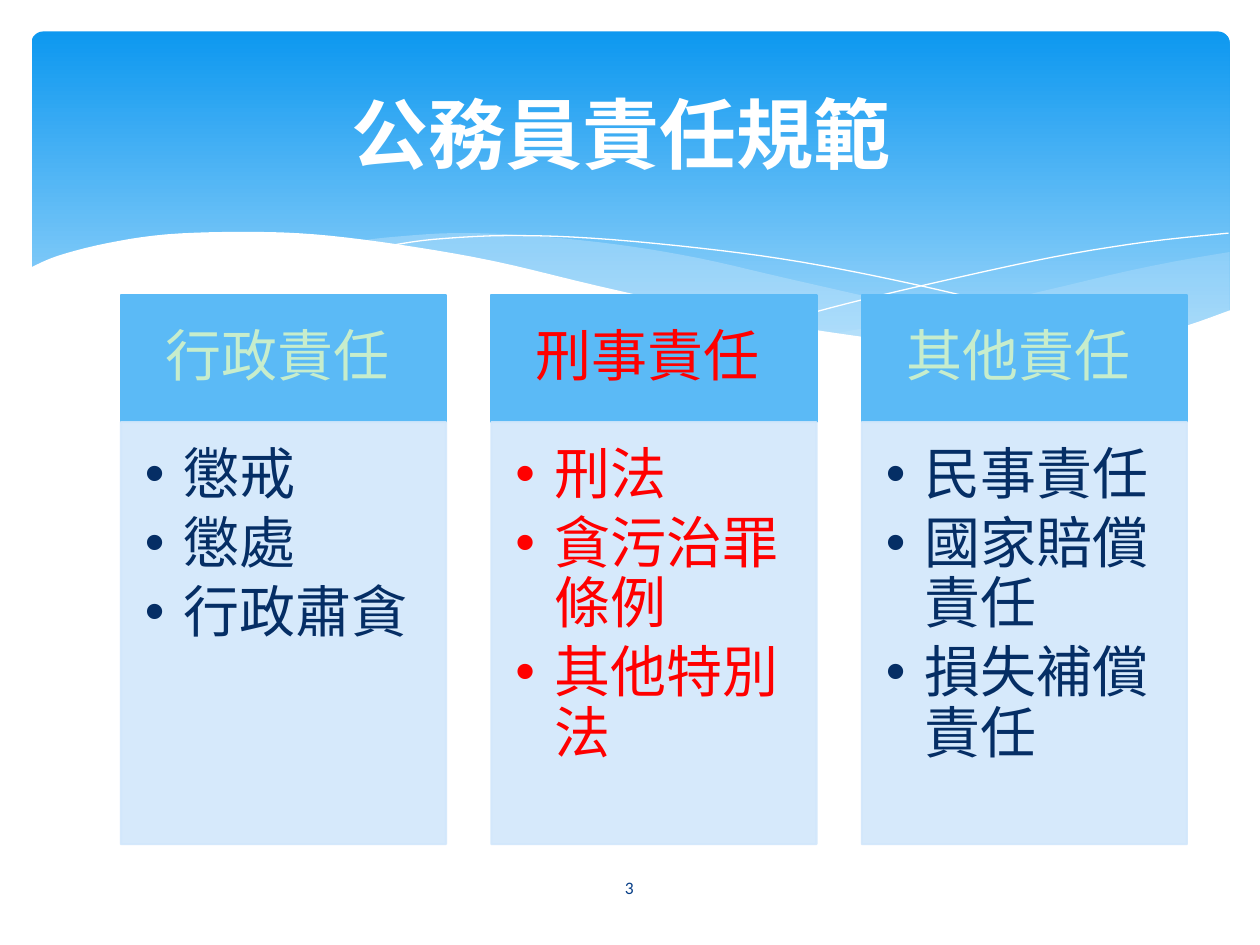
from lxml.etree import SubElement
from pptx import Presentation
from pptx.dml.color import RGBColor
from pptx.enum.shapes import MSO_SHAPE
from pptx.enum.text import MSO_ANCHOR, PP_ALIGN
from pptx.oxml.ns import qn
from pptx.util import Inches, Pt

WHITE, NAVY, RED, MINT = "FFFFFF", "052E65", "FF0000", "C7EDCC"
SKY, PALE, MIST = "5BBAF6", "D2E7FB", "C6E7FC"

BACK_RIGHT_TOP = [(9.76, 2), (9.35, 2.07), (8.91, 2.16), (8.32, 2.3), (7.53, 2.48), (6.61, 2.65)]
BACK_RIGHT_BOTTOM = [(6.61, 2.65), (7.05, 2.71), (7.57, 2.76), (8.03, 2.78), (8.54, 2.76),
                     (8.97, 2.7), (9.35, 2.62), (9.76, 2.47)]
MIDDLE_TOP = [(8.93, 2.73), (8.37, 2.65), (7.41, 2.47), (6.29, 2.22), (5.55, 2.05), (4.89, 1.94),
              (4.2, 1.87), (3.61, 1.85), (3.13, 1.88), (2.86, 1.91)]
MIDDLE_BOTTOM = [(2.86, 1.91), (3.42, 1.99), (4.04, 2.11), (4.91, 2.32), (5.66, 2.48), (6.5, 2.64),
                 (7.22, 2.74), (7.85, 2.78), (8.38, 2.78), (8.93, 2.73)]
LONG_LINE = [(3.09, 1.95), (3.44, 1.9), (4.01, 1.87), (4.69, 1.89), (5.56, 1.97), (6.36, 2.08),
             (7.27, 2.26), (8.31, 2.51), (9.07, 2.72)]
SHORT_LINE = [(6.13, 2.57), (6.72, 2.41), (7.48, 2.23), (8.36, 2.04), (9.1, 1.92), (9.75, 1.85)]
FRONT_WAVE = [(9.77, 2.46), (9.3, 2.62), (8.75, 2.73), (8.09, 2.77), (7.44, 2.74), (6.68, 2.65),
              (5.79, 2.5), (4.75, 2.27), (3.91, 2.07), (3.16, 1.94), (2.5, 1.86), (1.93, 1.84),
              (1.32, 1.86), (0.85, 1.93), (0.46, 2.03), (0.23, 2.13)]

COLUMNS = [
    ("行政責任 ", ["懲戒", "懲處", "行政肅貪"], MINT, NAVY),
    ("刑事責任 ", ["刑法", "貪污治罪條例", "其他特別法"], RED, RED),
    ("其他責任 ", ["民事責任", "國家賠償責任", "損失補償責任"], MINT, NAVY),
]


def rgb(value):
    """Return the colour of a hex string."""
    return RGBColor.from_string(value)


def set_alpha(fill_format, percent):
    """Make a solid fill partly transparent."""
    color = fill_format._xPr.find(qn("a:solidFill"))[0]
    SubElement(color, qn("a:alpha")).set("val", str(percent * 1000))


def smooth(points, steps=5):
    """Return points along a Catmull-Rom curve through the given points."""
    ends = [points[0], *points, points[-1]]
    curve = [points[0]]
    for a, b, c, d in zip(ends, ends[1:], ends[2:], ends[3:]):
        for i in range(1, steps + 1):
            t = i / steps
            curve.append(tuple(
                (2 * q + (r - p) * t + (2 * p - 5 * q + 4 * r - u) * t ** 2
                 + (3 * q - p - 3 * r + u) * t ** 3) / 2
                for p, q, r, u in zip(a, b, c, d)))
    return curve


def add_outline(s, points, fill=None, alpha=100):
    """Draw a filled wave, or a white hairline when no fill is given."""
    emu = [(Inches(x), Inches(y)) for x, y in points]
    builder = s.shapes.build_freeform(*emu[0])
    builder.add_line_segments(emu[1:], close=fill is not None)
    sp = builder.convert_to_shape()
    sp.shadow.inherit = False
    if fill:
        sp.fill.solid()
        sp.fill.fore_color.rgb = rgb(fill)
        set_alpha(sp.fill, alpha)
        sp.line.fill.background()
    else:
        sp.fill.background()
        sp.line.color.rgb = rgb(WHITE)
        sp.line.width = Pt(0)


def add_banner(s, left, top, width, height):
    """Draw the gradient banner and the waves along its lower edge."""
    sp = s.shapes.add_shape(MSO_SHAPE.ROUNDED_RECTANGLE, Inches(left), Inches(top),
                            Inches(width), Inches(height))
    sp.adjustments[0] = 0.034
    sp.shadow.inherit = False
    sp.line.fill.background()
    sp.fill.gradient()
    sp.fill.gradient_angle = 270
    for stop, position, color in zip(sp.fill.gradient_stops, (0, 0.9), ("0D98F0", "9DD6FA")):
        stop.position = position
        stop.color.rgb = rgb(color)
    add_outline(s, smooth(BACK_RIGHT_TOP) + smooth(BACK_RIGHT_BOTTOM), MIST, 29)
    add_outline(s, smooth(MIDDLE_TOP) + smooth(MIDDLE_BOTTOM), MIST, 40)
    add_outline(s, smooth(LONG_LINE))
    add_outline(s, smooth(SHORT_LINE))
    add_outline(s, smooth(FRONT_WAVE) + [(0.23, 3.29), (9.77, 3.29)], WHITE)


def format_text(p, size, color, align=PP_ALIGN.CENTER, bold=False):
    """Align a paragraph and format its runs."""
    p.alignment = align
    for r in p.runs:
        r.font.name = "Calibri"
        r.font.size = Pt(size)
        r.font.bold = bold
        r.font.color.rgb = rgb(color)


def add_box(s, left, top, width, height, fill, alpha, insets, anchor):
    """Add a filled rectangle and return its text frame."""
    sp = s.shapes.add_shape(MSO_SHAPE.RECTANGLE, Inches(left), Inches(top),
                            Inches(width), Inches(height))
    sp.shadow.inherit = False
    sp.line.width = Pt(1.25)
    for fill_format in (sp.fill, sp.line.fill):
        fill_format.solid()
        fill_format.fore_color.rgb = rgb(fill)
        set_alpha(fill_format, alpha)
    tf = sp.text_frame
    tf.word_wrap = True
    tf.vertical_anchor = anchor
    tf.margin_left, tf.margin_top, tf.margin_right, tf.margin_bottom = map(Inches, insets)
    return tf


def add_bullet(p):
    """Give a paragraph a round bullet with a hanging indent."""
    pPr = p._p.get_or_add_pPr()
    pPr.set("marL", str(Inches(0.31)))
    pPr.set("indent", str(-Inches(0.31)))
    SubElement(pPr, qn("a:buFont")).set("typeface", "Arial")
    SubElement(pPr, qn("a:buChar")).set("char", "•")


def add_column(s, left, top, width, height, column):
    """Draw one kind of liability: a heading over a bulleted list."""
    heading, items, heading_color, item_color = column
    head = 1.01
    tf = add_box(s, left, top, width, head, SKY, 100, (0.25, 0.14, 0.25, 0.14), MSO_ANCHOR.MIDDLE)
    tf.text = heading
    tf.paragraphs[0].line_spacing = 0.9
    format_text(tf.paragraphs[0], 32, heading_color)

    tf = add_box(s, left, top + head, width, height - head, PALE, 90,
                 (0.19, 0.19, 0.25, 0.28), MSO_ANCHOR.TOP)
    tf.text = "\n".join(items)
    for p in tf.paragraphs:
        p.line_spacing = 0.9
        p.space_after = Pt(4.8)
        format_text(p, 32, item_color, PP_ALIGN.LEFT)
        add_bullet(p)


def place_title(s, left, top, width, height, text):
    """Move the title placeholder to the front and format it."""
    title = s.shapes.title
    s.shapes._spTree.append(title._element)
    title.left, title.top, title.width, title.height = map(Inches, (left, top, width, height))
    tf = title.text_frame
    tf.text = text
    tf.vertical_anchor = MSO_ANCHOR.MIDDLE
    format_text(tf.paragraphs[0], 44, WHITE, bold=True)


def add_page_number(s, left, top, width, height, number):
    """Add the centred page number."""
    tf = s.shapes.add_textbox(*map(Inches, (left, top, width, height))).text_frame
    tf.word_wrap = True
    tf.vertical_anchor = MSO_ANCHOR.MIDDLE
    tf.text = number
    format_text(tf.paragraphs[0], 10, "073E87")


def main():
    """Build and save the slide."""
    prs = Presentation()
    prs.slide_width, prs.slide_height = Inches(10), Inches(7.5)
    s = prs.slides.add_slide(prs.slide_layouts[5])
    s.background.fill.solid()
    s.background.fill.fore_color.rgb = rgb(WHITE)
    add_banner(s, 0.25, 0.25, 9.51, 2.7)
    for i, column in enumerate(COLUMNS):
        add_column(s, 0.96 + i * 2.94, 2.34, 2.58, 4.36, column)
    place_title(s, 0.5, 0.37, 9, 1.37, "公務員責任規範 ")
    add_page_number(s, 4.36, 6.84, 1.27, 0.4, "3")
    prs.save("out.pptx")


if __name__ == "__main__":
    main()
